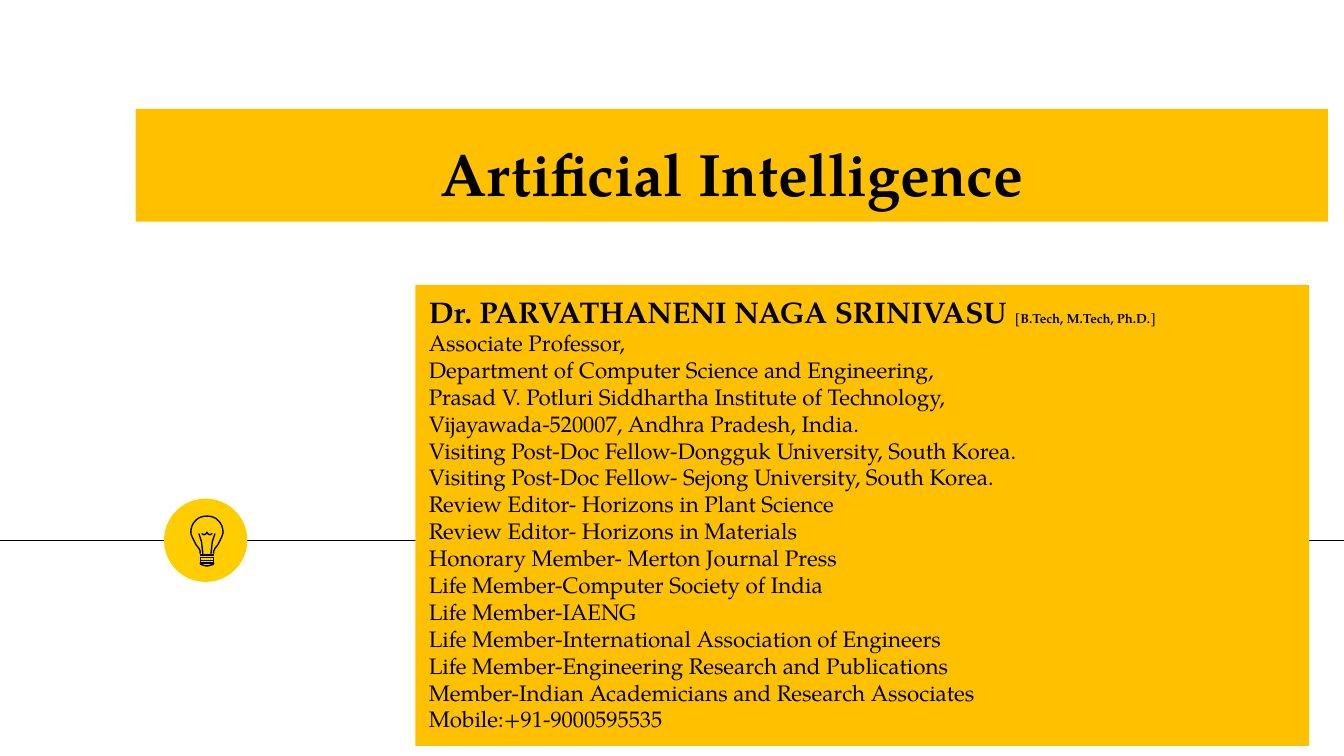
"""Builds the opening slide of an Artificial Intelligence lecture."""
from lxml import etree
from pptx import Presentation
from pptx import util as u
from pptx.dml.color import RGBColor
from pptx.enum import shapes, text
from pptx.oxml.ns import qn

CELL = u.Inches(0.01)
COLUMNS = 1000
FONT = "TeX Gyre Pagella"
COLORS = {"ink": "000000", "panel": "FFC000", "badge": "FFCD00"}
BULB_AXIS = 154

TITLE = [[("Artificial Intelligence", 32, True)]]
SPEAKER = [("Dr. PARVATHANENI NAGA SRINIVASU ", 16, True),
           ("[B.Tech, M.Tech, Ph.D.]", 7, True)]
ROLES = [
    "Associate Professor,",
    "Department of Computer Science and Engineering,",
    "Prasad V. Potluri Siddhartha Institute of Technology,",
    "Vijayawada-520007, Andhra Pradesh, India.",
    "Visiting Post-Doc Fellow-Dongguk University, South Korea.",
    "Visiting Post-Doc Fellow- Sejong University, South Korea.",
    "Review Editor- Horizons in Plant Science",
    "Review Editor- Horizons in Materials",
    "Honorary Member- Merton Journal Press",
    "Life Member-Computer Society of India",
    "Life Member-IAENG",
    "Life Member-International Association of Engineers",
    "Life Member-Engineering Research and Publications",
    "Member-Indian Academicians and Research Associates",
    "Mobile:+91-9000595535",
]

GLASS_LEFT = [(149, 412), (149, 410), (148, 408), (146, 405.5), (145, 403.5),
              (144, 401.5), (143, 399.5), (142.3, 397.5), (142, 396),
              (142.3, 393.5), (143, 391), (144.2, 389), (145.6, 387.3),
              (147.3, 385.8), (149.3, 384.8), (151.5, 384.2), (154, 384)]
FILAMENT_LEFT = [(151, 412), (150, 403), (148, 397)]
COIL_LEFT = [(150, 397), (152, 398), (153.5, 397), (154, 396)]
TIP_LEFT = [(149, 419), (149.5, 420), (153, 421), (154, 421)]


def color(name):
    """Return the named colour."""
    return RGBColor.from_string(COLORS[name])


def mirror(points):
    """Reflect points across the bulb axis, in reverse order."""
    return [(2 * BULB_AXIS - x, y) for x, y in reversed(points)]


def ink_line(stroke):
    """Give a stroke the thin ink line."""
    stroke.line.color.rgb = color("ink")
    stroke.line.width = u.Pt(0.75)


def fill_panel(panel, paragraphs, box, align):
    """Place a filled placeholder and write its paragraphs run by run."""
    panel.left, panel.top, panel.width, panel.height = [n * CELL for n in box]
    panel.fill.solid()
    panel.fill.fore_color.rgb = color("panel")
    panel.line.fill.background()
    frame = panel.text_frame
    frame.word_wrap = True
    frame.auto_size = text.MSO_AUTO_SIZE.NONE
    frame.vertical_anchor = text.MSO_ANCHOR.BOTTOM
    frame.margin_left = frame.margin_right = 10 * CELL
    frame.margin_top = frame.margin_bottom = 10 * CELL
    for index, runs in enumerate(paragraphs):
        paragraph = frame.add_paragraph() if index else frame.paragraphs[0]
        paragraph.alignment = align
        paragraph.space_before = u.Pt(0)
        for wording, size, bold in runs:
            run = paragraph.add_run()
            run.text = wording
            run.font.name, run.font.size, run.font.bold = FONT, u.Pt(size), bold
            run.font.color.rgb = color("ink")


def add_backdrop(slide):
    """Put the horizon line and the round badge behind the panels."""
    level = 402 * CELL
    horizon = slide.shapes.add_connector(
        shapes.MSO_CONNECTOR.STRAIGHT, -CELL, level, (COLUMNS + 1) * CELL, level)
    ink_line(horizon)
    etree.SubElement(horizon._element.spPr, qn("a:effectLst"))
    badge = slide.shapes.add_shape(
        shapes.MSO_SHAPE.OVAL, 122 * CELL, 371 * CELL, 62 * CELL, 62 * CELL)
    badge.shadow.inherit = False
    badge.fill.solid()
    badge.fill.fore_color.rgb = color("badge")
    badge.line.fill.background()
    for depth, part in enumerate((horizon, badge), start=2):
        slide.shapes._spTree.insert(depth, part._element)


def add_stroke(bulb, points, close=False):
    """Draw one unfilled outline of the bulb."""
    builder = bulb.shapes.build_freeform(*points[0], scale=CELL / 10)
    builder.add_line_segments(points[1:], close=close)
    stroke = builder.convert_to_shape()
    stroke.shadow.inherit = False
    stroke.fill.background()
    ink_line(stroke)


def tenths(points):
    """Express grid points in tenths of a cell."""
    return [(round(x * 10), round(y * 10)) for x, y in points]


def add_bulb(slide):
    """Draw the light bulb from mirrored halves."""
    bulb = slide.shapes.add_group_shape()
    rings = [[(149, top), (149, top + 2)] for top in (417, 415)]
    for half in rings + [TIP_LEFT]:
        add_stroke(bulb, tenths(half + mirror(half)), close=True)
    for filament in (FILAMENT_LEFT, mirror(FILAMENT_LEFT)):
        add_stroke(bulb, tenths(filament))
    for half in (GLASS_LEFT, COIL_LEFT, [(149, 413)]):
        add_stroke(bulb, tenths(half + mirror(half)))


def main():
    """Build and save the slide."""
    deck = Presentation()
    deck.slide_width = COLUMNS * CELL
    deck.slide_height = deck.slide_width * 9 // 16
    slide = deck.slides.add_slide(deck.slide_layouts[0])
    title, profile = slide.placeholders
    fill_panel(title, TITLE, (101, 81, 887, 84), text.PP_ALIGN.CENTER)
    biography = [SPEAKER] + [[(role, 12, False)] for role in ROLES]
    fill_panel(profile, biography, (309, 212, 665, 343), text.PP_ALIGN.LEFT)
    add_backdrop(slide)
    add_bulb(slide)
    deck.save("out.pptx")


if __name__ == "__main__":
    main()
